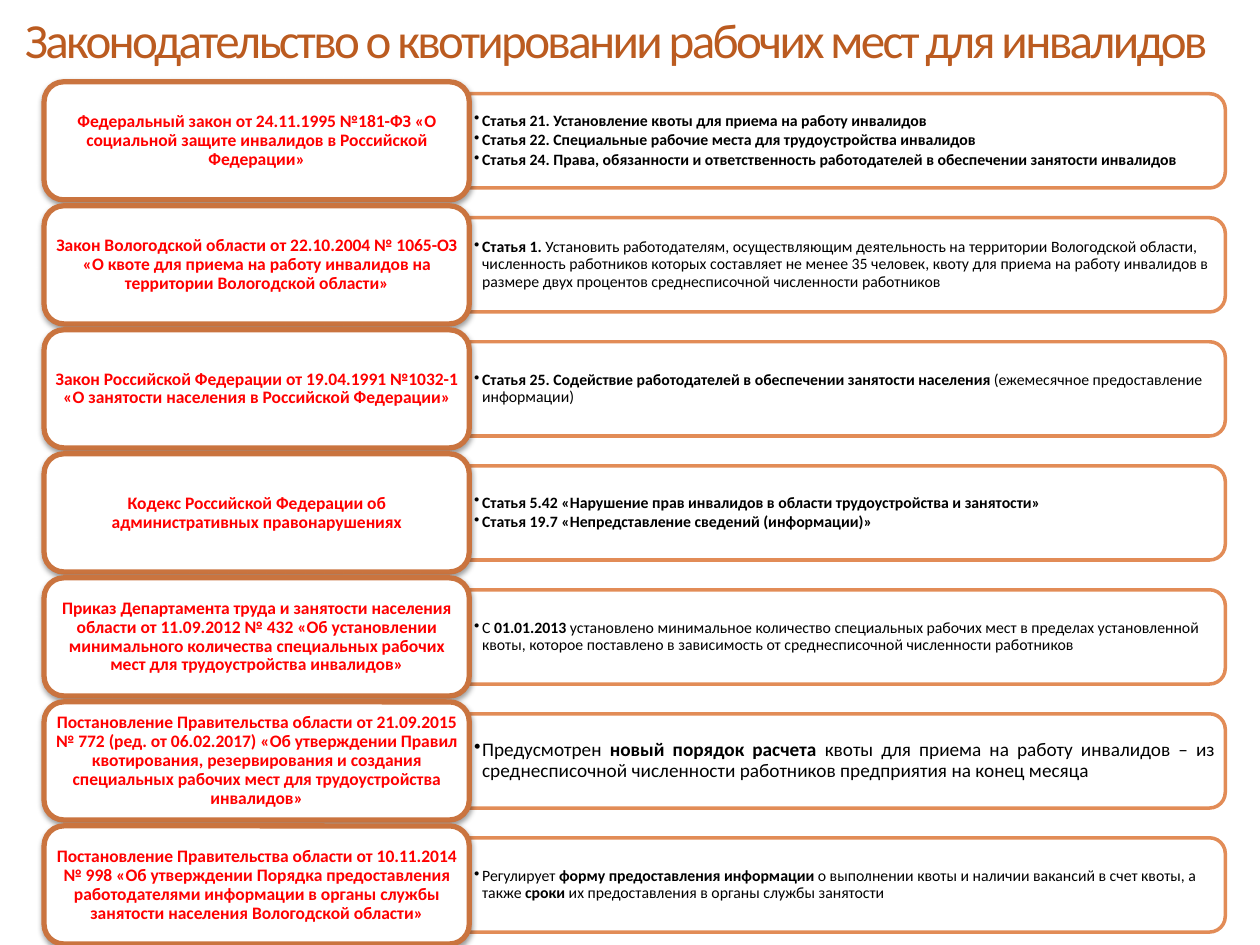
from lxml.etree import SubElement
from pptx import Presentation
from pptx.dml.color import RGBColor
from pptx.enum.shapes import MSO_SHAPE
from pptx.enum.text import MSO_ANCHOR, MSO_AUTO_SIZE, PP_ALIGN
from pptx.oxml.ns import qn
from pptx.util import Cm, Pt

WHITE = RGBColor(0xFF, 0xFF, 0xFF)
BLACK = RGBColor(0x00, 0x00, 0x00)
RED = RGBColor(0xFF, 0x00, 0x00)
TITLE_BROWN = RGBColor(0xBB, 0x5B, 0x20)
LAW_BORDER = RGBColor(0xCA, 0x74, 0x3F)
DETAIL_BORDER = RGBColor(0xDF, 0x80, 0x45)
FONT = "Calibri"

TITLE = "Законодательство о квотировании рабочих мест для инвалидов"
LAWS = [
    ("Федеральный закон от 24.11.1995 №181-ФЗ «О социальной защите инвалидов "
     "в Российской Федерации»",
     [[("Статья 21. Установление квоты для приема на работу инвалидов", True)],
      [("Статья 22. Специальные рабочие места для трудоустройства инвалидов", True)],
      [("Статья 24. Права, обязанности и ответственность работодателей "
        "в обеспечении занятости инвалидов", True)]]),
    ("Закон Вологодской области от 22.10.2004 № 1065-ОЗ «О квоте для приема "
     "на работу инвалидов на территории Вологодской области»",
     [[("Статья 1. ", True),
       ("Установить работодателям, осуществляющим деятельность на территории "
        "Вологодской области, численность работников которых составляет не менее "
        "35 человек, квоту для приема на работу инвалидов в размере двух процентов "
        "среднесписочной численности работников", False)]]),
    ("Закон Российской Федерации от 19.04.1991 №1032-1 «О занятости населения "
     "в Российской Федерации»",
     [[("Статья 25. Содействие работодателей в обеспечении занятости населения ", True),
       ("(ежемесячное предоставление информации)", False)]]),
    ("Кодекс Российской Федерации об административных правонарушениях",
     [[("Статья 5.42 «Нарушение прав инвалидов в области трудоустройства "
        "и занятости»", True)],
      [("Статья 19.7 «Непредставление сведений (информации)»", True)]]),
    ("Приказ Департамента труда и занятости населения области от 11.09.2012 № 432 "
     "«Об установлении минимального количества специальных рабочих мест "
     "для трудоустройства инвалидов»",
     [[("С ", False), ("01.01.2013", True),
       (" установлено минимальное количество специальных рабочих мест в пределах "
        "установленной квоты, которое поставлено в зависимость от среднесписочной "
        "численности работников", False)]]),
    ("Постановление Правительства области от 21.09.2015 № 772 (ред. от 06.02.2017) "
     "«Об утверждении Правил квотирования, резервирования и создания специальных "
     "рабочих мест для трудоустройства инвалидов»",
     [[("Предусмотрен ", False), ("новый порядок расчета ", True),
       ("квоты для приема на работу инвалидов – из среднесписочной численности "
        "работников предприятия на конец месяца", False)]]),
    ("Постановление Правительства области от 10.11.2014 № 998 «Об утверждении "
     "Порядка предоставления работодателями информации в органы службы занятости "
     "населения Вологодской области»",
     [[("Регулирует ", False), ("форму предоставления информации ", True),
       ("о выполнении квоты и наличии вакансий в счет квоты, а также ", False),
       ("сроки", True),
       (" их предоставления в органы службы занятости", False)]]),
]
HIGHLIGHTED_ROW = 5


def format_font(font, size, color, bold=False):
    """Apply the slide font with a size, colour and weight."""
    font.name, font.size, font.bold = FONT, Pt(size), bold
    font.color.rgb = color


def format_frame(frame, horizontal, vertical):
    """Wrap and centre a text frame vertically within the given insets."""
    frame.word_wrap = True
    frame.vertical_anchor = MSO_ANCHOR.MIDDLE
    frame.margin_left = frame.margin_right = horizontal
    frame.margin_top = frame.margin_bottom = vertical


def set_alpha(element, percent):
    """Make every solid colour inside an element partly transparent."""
    for color in element.iter(qn("a:srgbClr")):
        SubElement(color, qn("a:alpha"), val=str(percent * 1000))


def add_bullet(para):
    """Give a paragraph a round bullet with a hanging indent."""
    properties = para._p.get_or_add_pPr()
    properties.set("marL", str(Cm(0.16)))
    properties.set("indent", str(Cm(-0.16)))
    SubElement(properties, qn("a:buChar"), char="•")


def add_shadow(shape):
    """Put a soft shadow just below a shape."""
    shape.shadow.inherit = False
    effects = shape._element.spPr.find(qn("a:effectLst"))
    shadow = SubElement(effects, qn("a:outerShdw"), blurRad=str(Pt(3.1)),
                        dist=str(Pt(1.6)), dir="5400000", rotWithShape="0")
    color = SubElement(shadow, qn("a:srgbClr"), val="000000")
    SubElement(color, qn("a:alpha"), val="38000")


def add_title(page, left, top, width, height):
    """Fill the title placeholder with tightly spaced text."""
    title = page.shapes.title
    title.left, title.top, title.width, title.height = left, top, width, height
    frame = title.text_frame
    frame.text = TITLE
    format_frame(frame, 0, 0)
    frame.auto_size = MSO_AUTO_SIZE.SHAPE_TO_FIT_TEXT
    para = frame.paragraphs[0]
    para.alignment = PP_ALIGN.LEFT
    para.line_spacing = 0.9
    span = para.runs[0]
    format_font(span.font, 28, TITLE_BROWN)
    span._r.get_or_add_rPr().set("spc", "-150")


def add_detail_panel(page, left, top, width, height, items, size, alignment):
    """Draw a panel rounded on its right side with a bulleted list over it."""
    panel = page.shapes.add_shape(
        MSO_SHAPE.ROUND_2_SAME_RECTANGLE, left + (width - height) // 2,
        top + (height - width) // 2, height, width)
    panel.rotation = 90
    panel.shadow.inherit = False
    panel.fill.solid()
    panel.fill.fore_color.rgb = WHITE
    panel.line.color.rgb = DETAIL_BORDER
    panel.line.width = Pt(2)
    set_alpha(panel._element.spPr, 90)

    box = page.shapes.add_textbox(left, top + Cm(0.09), width - Cm(0.1),
                                  height - Cm(0.18))
    frame = box.text_frame
    format_frame(frame, Cm(0.1), Cm(0.05))
    for index, item in enumerate(items):
        para = frame.add_paragraph() if index else frame.paragraphs[0]
        para.level = 1
        para.alignment = alignment
        para.line_spacing = 0.9
        para.space_after = Pt(1.5)
        add_bullet(para)
        for text, bold in item:
            span = para.add_run()
            span.text = text
            format_font(span.font, size, BLACK, bold)


def add_law_card(page, left, top, width, height, name):
    """Draw a rounded card with the name of a law."""
    card = page.shapes.add_shape(MSO_SHAPE.ROUNDED_RECTANGLE, left, top, width, height)
    card.fill.solid()
    card.fill.fore_color.rgb = WHITE
    card.line.color.rgb = LAW_BORDER
    card.line.width = Pt(3)
    add_shadow(card)
    frame = card.text_frame
    frame.text = name
    format_frame(frame, Cm(0.1), Cm(0.05))
    para = frame.paragraphs[0]
    para.alignment = PP_ALIGN.CENTER
    para.line_spacing = 0.9
    format_font(para.runs[0].font, 10, RED, True)


def add_law_rows(page, left, top, width, pitch):
    """Stack one row per law: the card on the left, its details on the right."""
    card_width, card_height, panel_height = Cm(8.57), Cm(2.38), Cm(1.9)
    for row, (name, items) in enumerate(LAWS):
        row_top = top + row * pitch
        highlighted = row == HIGHLIGHTED_ROW
        add_detail_panel(page, left + card_width,
                         row_top + (card_height - panel_height) // 2,
                         width - card_width, panel_height, items,
                         11 if highlighted else 9,
                         PP_ALIGN.JUSTIFY if highlighted else PP_ALIGN.LEFT)
        add_law_card(page, left, row_top, card_width, card_height, name)


def main():
    """Build and save the deck."""
    deck = Presentation()
    deck.slide_width, deck.slide_height = Cm(25.4), Cm(19.05)
    page = deck.slides.add_slide(deck.slide_layouts[5])
    add_title(page, Cm(0.5), Cm(0.33), Cm(24.6), Cm(1.07))
    add_law_rows(page, Cm(0.89), Cm(1.65), Cm(23.81), Cm(2.5))
    deck.save("out.pptx")


if __name__ == "__main__":
    main()
